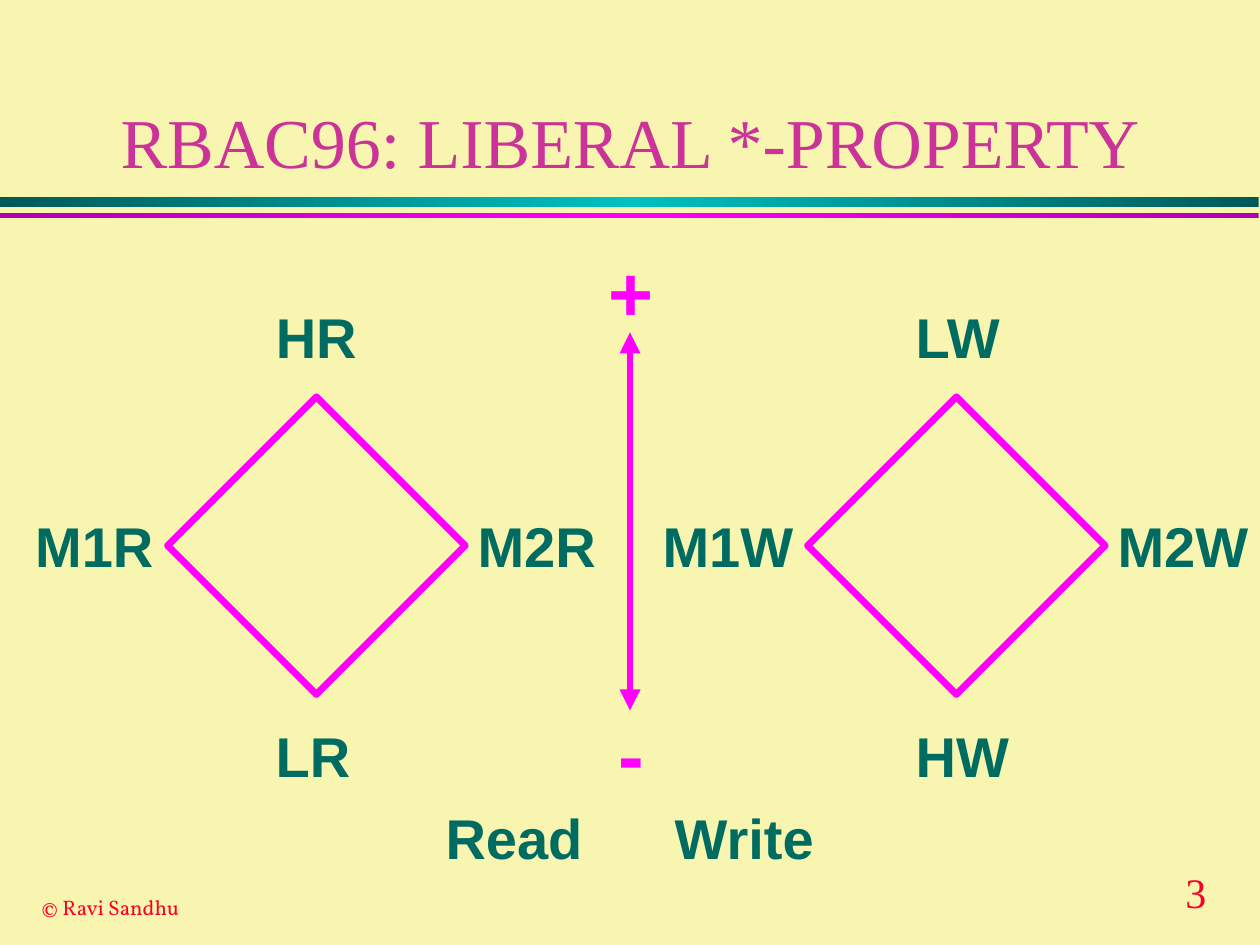
import copy

import lxml.etree
import pptx
import pptx.dml.color
import pptx.enum.shapes
import pptx.enum.text
import pptx.oxml.ns
import pptx.util

Pt = pptx.util.Pt
SHAPE = pptx.enum.shapes.MSO_SHAPE
ALIGN = pptx.enum.text.PP_ALIGN
qn = pptx.oxml.ns.qn

CREAM, MAGENTA, GREEN, RED, PINK = "F7F5AF", "FF00FF", "006B61", "FC0128", "CC3399"
DIAMOND_TOP, DIAMOND_SIZE = 226.8, 170
LABEL_HEIGHT = 46


def color(value):
    """Return the colour for a hex string."""
    return pptx.dml.color.RGBColor.from_string(value)


def write_run(paragraph, text, size, font_name, value, bold=False):
    """Add one formatted run to a paragraph."""
    run = paragraph.add_run()
    run.text = text
    font = run.font
    font.size, font.name, font.bold = Pt(size), font_name, bold
    font.color.rgb = color(value)


def add_text(shapes, text, left, top, width, height, size=32, font_name="Arial",
             value=GREEN, bold=True, wrap=False):
    """Add a text box with one run and return its paragraph."""
    box = shapes.add_textbox(Pt(left), Pt(top), Pt(width), Pt(height))
    frame = box.text_frame
    frame.word_wrap = wrap
    frame.auto_size = pptx.enum.text.MSO_AUTO_SIZE.SHAPE_TO_FIT_TEXT
    paragraph = frame.paragraphs[0]
    write_run(paragraph, text, size, font_name, value, bold)
    return paragraph


def add_bar(shapes, top, height, edge, middle):
    """Add a full-width bar whose gradient is brightest in the middle."""
    bar = shapes.add_shape(SHAPE.RECTANGLE, 0, Pt(top), Pt(719.3), Pt(height))
    bar.shadow.inherit = False
    bar.line.fill.background()
    bar.fill.gradient()
    bar.fill.gradient_angle = 0
    stop_list = next(bar._element.iter(qn("a:gsLst")))
    stop_list.insert(1, copy.deepcopy(stop_list[0]))
    stops = zip(bar.fill.gradient_stops, (0, 0.5, 1), (edge, middle, edge))
    for stop, position, value in stops:
        stop.position = position
        stop.color.rgb = color(value)


def add_lattice(shapes, left, labels, widths):
    """Add a diamond with labels at its top, left, right and bottom."""
    group = shapes.add_group_shape().shapes
    diamond = group.add_shape(SHAPE.DIAMOND, Pt(left), Pt(DIAMOND_TOP),
                              Pt(DIAMOND_SIZE), Pt(DIAMOND_SIZE))
    diamond.shadow.inherit = False
    diamond.fill.background()
    diamond.line.color.rgb = color(MAGENTA)
    diamond.line.width = Pt(4)
    places = ((left + 54.7, 169.2), (left - widths[1], 288.9),
              (left + DIAMOND_SIZE, 288.9), (left + 54.7, 409))
    for label, width, (x, y) in zip(labels, widths, places):
        add_text(group, label, x, y, width, LABEL_HEIGHT)


def add_double_arrow(shapes, x, bottom, top):
    """Add a vertical line with an arrowhead at each end."""
    arrow = shapes.add_connector(pptx.enum.shapes.MSO_CONNECTOR.STRAIGHT,
                                 Pt(x), Pt(bottom), Pt(x), Pt(top))
    arrow.line.color.rgb = color(MAGENTA)
    arrow.line.width = Pt(4)
    line = arrow.line._get_or_add_ln()
    for end in ("a:headEnd", "a:tailEnd"):
        lxml.etree.SubElement(line, qn(end), type="triangle")
    lxml.etree.SubElement(arrow._element.spPr, qn("a:effectLst"))


def add_title(slide, text):
    """Place and format the title."""
    title = slide.shapes.title
    title.left, title.top, title.width, title.height = Pt(54), Pt(18), Pt(612), Pt(90)
    frame = title.text_frame
    frame.vertical_anchor = pptx.enum.text.MSO_ANCHOR.BOTTOM
    frame.paragraphs[0].alignment = ALIGN.CENTER
    write_run(frame.paragraphs[0], text, 40, "Times New Roman", PINK)


def add_captions(shapes):
    """Add the two captions, set apart by a tab stop."""
    paragraph = add_text(shapes, "Read\tWrite", 247.5, 455.8, 229, LABEL_HEIGHT, wrap=True)
    paragraph.alignment = ALIGN.LEFT
    tab_list = lxml.etree.SubElement(paragraph._p.get_or_add_pPr(), qn("a:tabLst"))
    lxml.etree.SubElement(tab_list, qn("a:tab"), pos=str(Pt(131)), algn="l")


def main():
    """Build the slide and save it."""
    presentation = pptx.Presentation()
    presentation.slide_width, presentation.slide_height = Pt(720), Pt(540)
    slide = presentation.slides.add_slide(presentation.slide_layouts[5])
    slide.background.fill.solid()
    slide.background.fill.fore_color.rgb = color(CREAM)
    shapes = slide.shapes

    bars = shapes.add_group_shape().shapes
    add_bar(bars, 112.5, 5.7, "005959", "00C0C0")
    add_bar(bars, 121.6, 3, "B200B2", MAGENTA)
    add_text(shapes, "3", 670.3, 491.8, 42.5, 36, 24, "Times New Roman", RED, False)
    add_text(shapes, "© Ravi Sandhu", 16.6, 507.6, 94.3, 21.6, 12, "Vollkorn", RED, False)
    add_title(slide, "RBAC96: LIBERAL *-PROPERTY")

    add_lattice(shapes, 95.8, ("HR", "M1R", "M2R", "LR"), (61.2, 82.8, 82.8, 57.6))
    add_lattice(shapes, 461.5, ("LW", "M1W", "M2W", "HW"), (64.8, 90, 90, 68.4))
    add_captions(shapes)
    add_double_arrow(shapes, 360, 406, 190)
    add_text(shapes, "-", 346.3, 400.3, 29.5, 60.5, 44, value=MAGENTA)
    add_text(shapes, "+", 340.6, 136.1, 41, 60.5, 44, value=MAGENTA)
    presentation.save("out.pptx")


if __name__ == "__main__":
    main()
